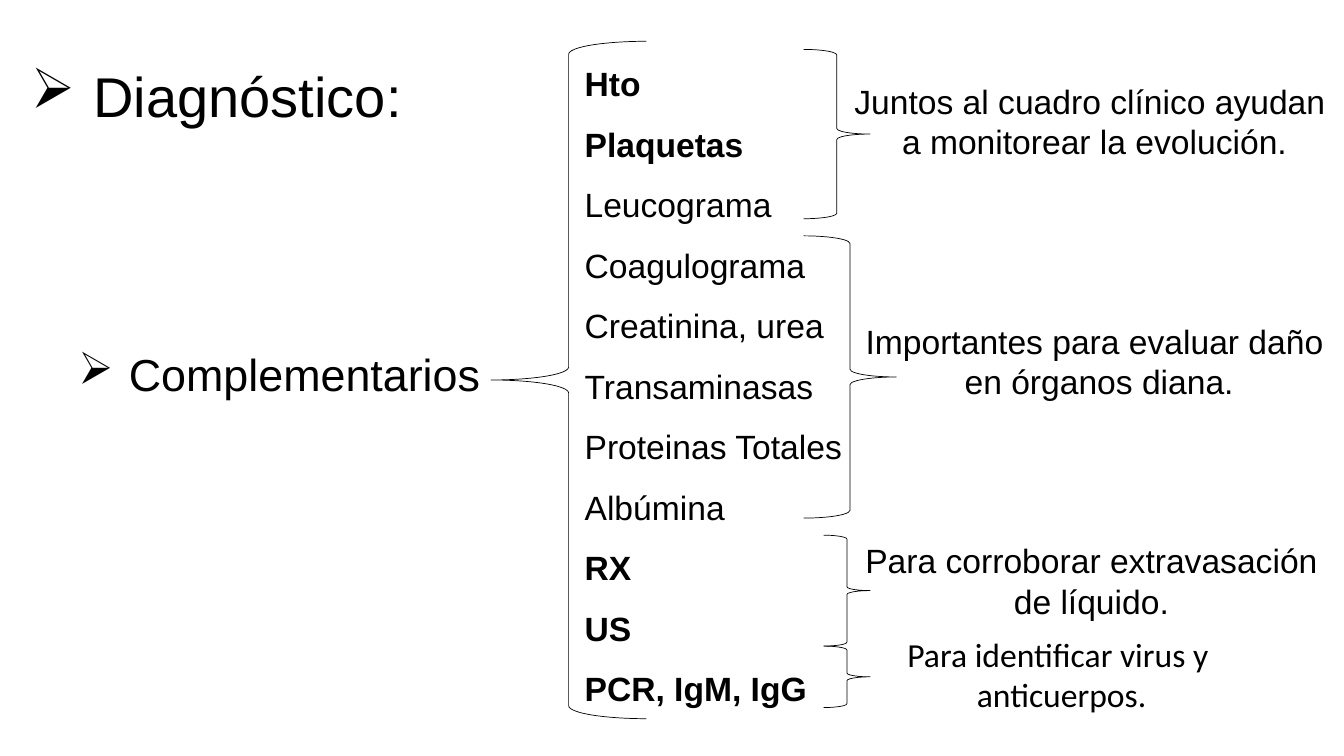
from pptx import Presentation
from pptx.dml.color import RGBColor
from pptx.enum.shapes import MSO_SHAPE
from pptx.enum.text import MSO_AUTO_SIZE, PP_ALIGN
from pptx.oxml.ns import qn
from pptx.util import Inches, Pt
from lxml.etree import SubElement

BLACK = "000000"

TESTS = [
    ("Hto", True),
    ("Plaquetas", True),
    ("Leucograma", False),
    ("Coagulograma", False),
    ("Creatinina, urea", False),
    ("Transaminasas", False),
    ("Proteinas Totales", False),
    ("Albúmina", False),
    ("RX", True),
    ("US", True),
    ("PCR, IgM, IgG", True),
]

BRACES = [
    (MSO_SHAPE.LEFT_BRACE, 4.87, 0.41, 1.54, 6.72),
    (MSO_SHAPE.RIGHT_BRACE, 8.17, 5.31, 0.46, 1.1),
    (MSO_SHAPE.RIGHT_BRACE, 7.97, 0.49, 0.66, 1.68),
    (MSO_SHAPE.RIGHT_BRACE, 7.97, 2.34, 0.92, 2.8),
    (MSO_SHAPE.RIGHT_BRACE, 8.17, 6.41, 0.46, 0.61),
]

NOTES = [
    (8.35, 0.75, 5.01, ["Juntos al cuadro clínico ayudan ", "a monitorear la evolución."], "Arial"),
    (8.46, 3.13, 4.79, ["Importantes para evaluar daño", " en órganos diana."], "Arial"),
    (8.46, 5.31, 4.73, ["Para corroborar extravasación", "de líquido."], "Arial"),
    (8.88, 6.24, 3.3, ["Para identificar virus y ", "anticuerpos."], "Calibri"),
]


def color(value):
    return RGBColor.from_string(value)


def add_text(s, x, y, w, h, lines, size=24, font="Arial"):
    tb = s.shapes.add_textbox(Inches(x), Inches(y), Inches(w), Inches(h))
    tf = tb.text_frame
    tf.text = "\n".join(lines)
    tf.word_wrap = False
    tf.auto_size = MSO_AUTO_SIZE.SHAPE_TO_FIT_TEXT
    for p in tf.paragraphs:
        for r in p.runs:
            r.font.size = Pt(size)
            r.font.name = font
            r.font.color.rgb = color(BLACK)
    return tf


def add_heading(s, x, y, w, h, text, size, indent):
    tf = add_text(s, x, y, w, h, [text], size)
    pPr = tf.paragraphs[0]._p.get_or_add_pPr()
    pPr.set("marL", str(Inches(indent)))
    pPr.set("indent", str(-Inches(indent)))
    SubElement(pPr, qn("a:buFont")).set("typeface", "Wingdings")
    SubElement(pPr, qn("a:buChar")).set("char", "Ø")


def add_tests(s):
    tf = add_text(s, 5.7, 0.38, 2.78, 7.37, [name for name, bold in TESTS])
    for p, (name, bold) in zip(tf.paragraphs, TESTS):
        p.line_spacing = 1.5
        p.runs[0].font.bold = bold


def add_brace(s, kind, x, y, w, h):
    sp = s.shapes.add_shape(kind, Inches(x), Inches(y), Inches(w), Inches(h))
    sp.shadow.inherit = False
    sp.fill.background()
    sp.line.color.rgb = color(BLACK)
    sp.line.width = Pt(0.5)


def add_note(s, x, y, w, lines, font):
    tf = add_text(s, x, y, w, 0.91, lines, font=font)
    for p in tf.paragraphs:
        p.alignment = PP_ALIGN.CENTER


def main():
    prs = Presentation()
    prs.slide_width = Inches(13.33)
    prs.slide_height = Inches(7.5)
    s = prs.slides.add_slide(prs.slide_layouts[6])
    add_heading(s, 0.21, 0.56, 3.92, 0.77, "Diagnóstico:", 40, 0.62)
    add_heading(s, 0.68, 3.39, 4.22, 0.64, "Complementarios", 32, 0.5)
    add_tests(s)
    for brace in BRACES:
        add_brace(s, *brace)
    for note in NOTES:
        add_note(s, *note)
    prs.save("out.pptx")


if __name__ == "__main__":
    main()
